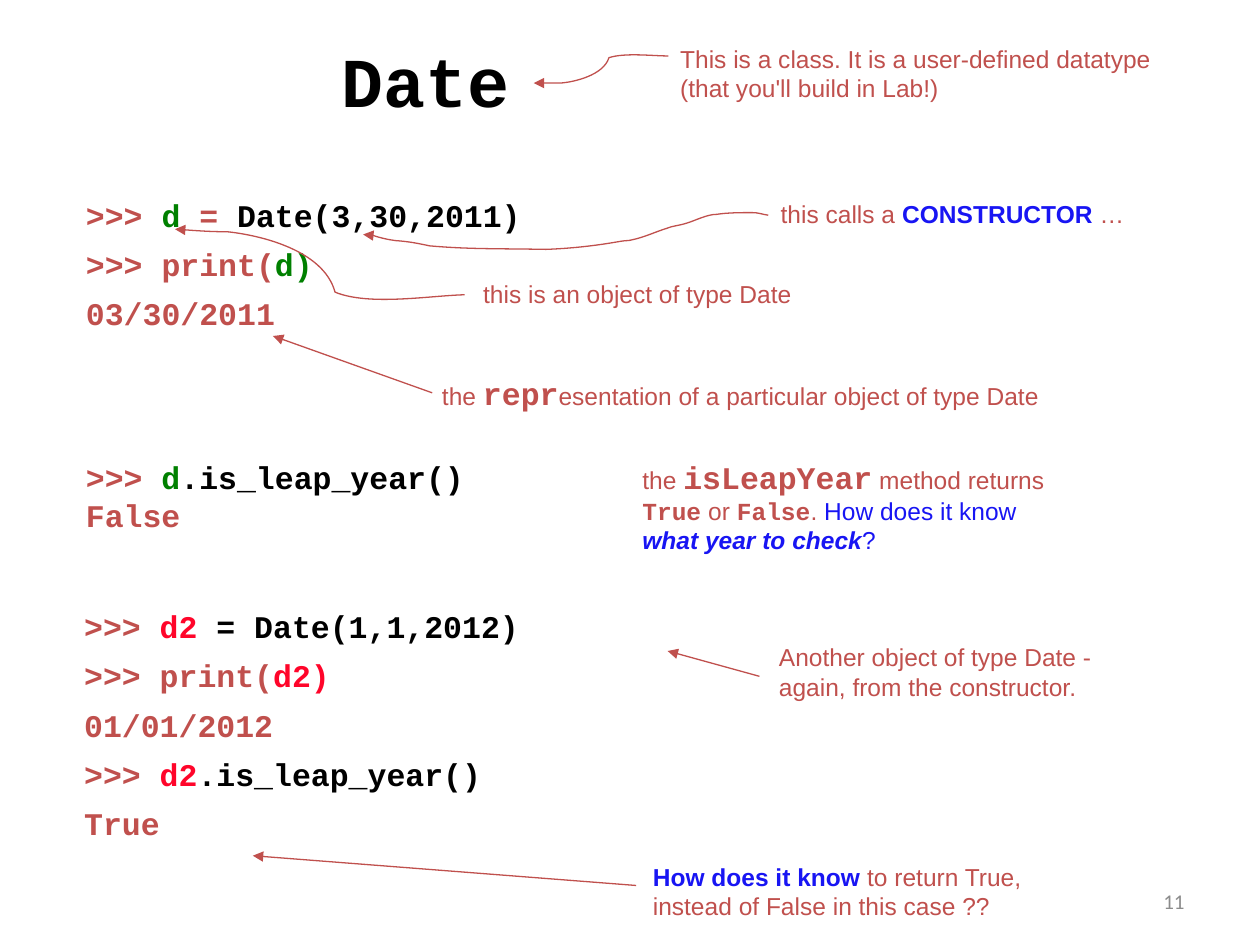
from dataclasses import dataclass

from lxml import etree
from pptx import Presentation
from pptx.dml.color import RGBColor
from pptx.enum import shapes, text
from pptx.oxml import ns
from pptx.util import Pt


@dataclass(frozen=True)
class Theme:
    red: str = "C0504D"
    black: str = "000000"
    green: str = "008000"
    blue: str = "1815F3"
    scarlet: str = "FF052A"
    grey: str = "8C8C8C"
    title_size: float = 40
    code_size: float = 18
    note_size: float = 14
    number_size: float = 12
    line: float = 0.75


T = Theme()


def code(words, color=T.red, size=T.code_size):
    return words, color, dict(name="Courier New", size=Pt(size), bold=True)


def note(words, color=T.red, bold=False, italic=False):
    return words, color, dict(name="Arial", size=Pt(T.note_size), bold=bold, italic=italic)


def fill_text(sp, paragraphs, anchor=text.MSO_ANCHOR.TOP, **formats):
    """Write paragraphs, each a list of (words, colour, font values) runs."""
    tf = sp.text_frame
    tf.word_wrap = True
    tf.auto_size = text.MSO_AUTO_SIZE.NONE
    tf.vertical_anchor = anchor
    for i, runs in enumerate(paragraphs):
        p = tf.add_paragraph() if i else tf.paragraphs[0]
        for key, value in formats.items():
            setattr(p, key, value)
        for words, color, font in runs:
            r = p.add_run()
            r.text = words
            r.font.color.rgb = RGBColor.from_string(color)
            for key, value in font.items():
                setattr(r.font, key, value)


def add_text(s, box, paragraphs, **formats):
    sp = s.shapes.add_textbox(*map(Pt, box))
    fill_text(sp, paragraphs, **formats)
    return sp


def add_title(s, box, runs):
    sp = s.shapes.title
    sp.left, sp.top, sp.width, sp.height = map(Pt, box)
    fill_text(sp, [runs], alignment=text.PP_ALIGN.CENTER)


def style_arrow(sp):
    sp.line.color.rgb = RGBColor.from_string(T.red)
    sp.line.width = Pt(T.line)
    etree.SubElement(sp.line._get_or_add_ln(), ns.qn("a:tailEnd"), type="triangle")
    etree.SubElement(sp._element.spPr, ns.qn("a:effectLst"))


def add_arrow(s, start, end):
    sp = s.shapes.add_connector(shapes.MSO_CONNECTOR.STRAIGHT, *map(Pt, start + end))
    style_arrow(sp)


def add_curved_arrow(s, points):
    """Draw Bezier segments: a start, then two controls and an end for each."""
    start, *rest = [(Pt(x), Pt(y)) for x, y in points]
    builder = s.shapes.build_freeform(*start)
    builder.add_line_segments(rest, close=False)
    sp = builder.convert_to_shape()
    outline = next(sp._element.iter(ns.qn("a:path")))
    steps = outline.findall(ns.qn("a:lnTo"))
    for i in range(0, len(steps), 3):
        curve = etree.SubElement(outline, ns.qn("a:cubicBezTo"))
        for step in steps[i:i + 3]:
            curve.append(step[0])
            outline.remove(step)
    sp.fill.background()
    style_arrow(sp)


def add_code(s):
    prompt = code(">>> ")
    add_text(s, (42, 102, 636, 92), [
        [prompt, code("d", T.green), code(" = "), code("Date(3,30,2011)", T.black)],
        [code(">>> print("), code("d)", T.green)],
        [code("03/30/2011")],
    ], line_spacing=1.3)
    add_text(s, (42, 258, 546, 51), [
        [prompt, code("d", T.green), code(".is_leap_year()", T.black)],
        [code("False")],
    ])
    second = add_text(s, (41, 343.5, 546.5, 142.5), [
        [prompt, code("d2 ", T.scarlet), code("= Date(1,1,2012)", T.black)],
        [code(">>> print("), code("d2)", T.scarlet)],
        [code("01/01/2012")],
        [prompt, code("d2", T.scarlet), code(".is_leap_year()", T.black)],
        [code("True")],
    ], line_spacing=1.3)
    second.text_frame.paragraphs[0].line_spacing = None


def add_notes(s):
    notes = [
        ((269, 156, 320, 24), [note("this is an object of type Date")]),
        ((381.6, 21.6, 288, 41),
         [note("This is a class. It is a user-defined datatype (that you'll build in Lab!)")]),
        ((439, 110, 231, 24),
         [note("this calls a "), note("CONSTRUCTOR", T.blue, bold=True), note(" …")]),
        ((245.5, 210, 368, 29),
         [note("the "), code("repr"),
          note("esentation of a particular object of type Date")]),
        ((360, 258, 246, 63),
         [note("the "), code("isLeapYear"), note(" method returns "),
          code("True", size=T.note_size), note(" or "),
          code("False", size=T.note_size), note(". "),
          note("How does it know ", T.blue),
          note("what year to check", T.blue, bold=True, italic=True), note("?", T.blue)]),
        ((366, 489, 252, 41),
         [note("How does it know", T.blue, bold=True),
          note(" to return True, instead of False in this case ??")]),
        ((438, 363.5, 218, 41),
         [note("Another object of type Date - again, from the constructor.")]),
    ]
    for box, runs in notes:
        add_text(s, box, [runs])


def add_arrows(s):
    class_arrow = [
        (382, 32), (373, 32), (357, 30), (348, 33), (345, 43), (328, 47), (320, 47.5),
        (315, 47.5), (305, 47.5), (305, 47.5)]
    object_arrow = [
        (265.5, 168.5), (245.5, 169), (211, 175), (191.5, 167), (185, 143), (149, 134.5),
        (130, 132.5), (120, 132.5), (100, 131), (100, 131)]
    constructor_arrow = [
        (439, 123), (435.5, 122.5), (433.5, 121.5), (430, 121.5),
        (423, 121.5), (416, 121.5), (409.5, 122.5), (404, 122.5), (397.5, 126), (392.5, 127.5),
        (388, 129), (384.5, 129), (381, 130.5), (374.5, 132.5), (368.5, 135.5), (361.5, 137),
        (357, 138), (360.5, 137), (354, 138), (340, 140.5), (326, 142), (312, 142.5),
        (285, 142), (268.5, 142.5), (245.5, 140.5), (238.5, 139), (233.5, 138), (226, 137.5),
        (222, 137), (217.5, 136), (213, 134.5), (211, 134.5), (209.5, 134), (207.5, 134)]
    for points in (class_arrow, object_arrow, constructor_arrow):
        add_curved_arrow(s, points)
    for start, end in [((247, 224.5), (156, 192)),
                       ((434, 386.5), (381.5, 372)),
                       ((363.5, 506), (144.5, 489))]:
        add_arrow(s, start, end)


def main():
    prs = Presentation()
    prs.slide_width, prs.slide_height = Pt(720), Pt(540)
    s = prs.slides.add_slide(prs.slide_layouts[5])
    add_title(s, (60, 18, 366, 55), [code("Date", T.black, T.title_size)])
    add_code(s)
    add_notes(s)
    add_arrows(s)
    number = ("11", T.grey, dict(name="Calibri", size=Pt(T.number_size)))
    add_text(s, (516, 500.5, 168, 29), [[number]],
             anchor=text.MSO_ANCHOR.MIDDLE, alignment=text.PP_ALIGN.RIGHT)
    prs.save("out.pptx")


if __name__ == "__main__":
    main()
